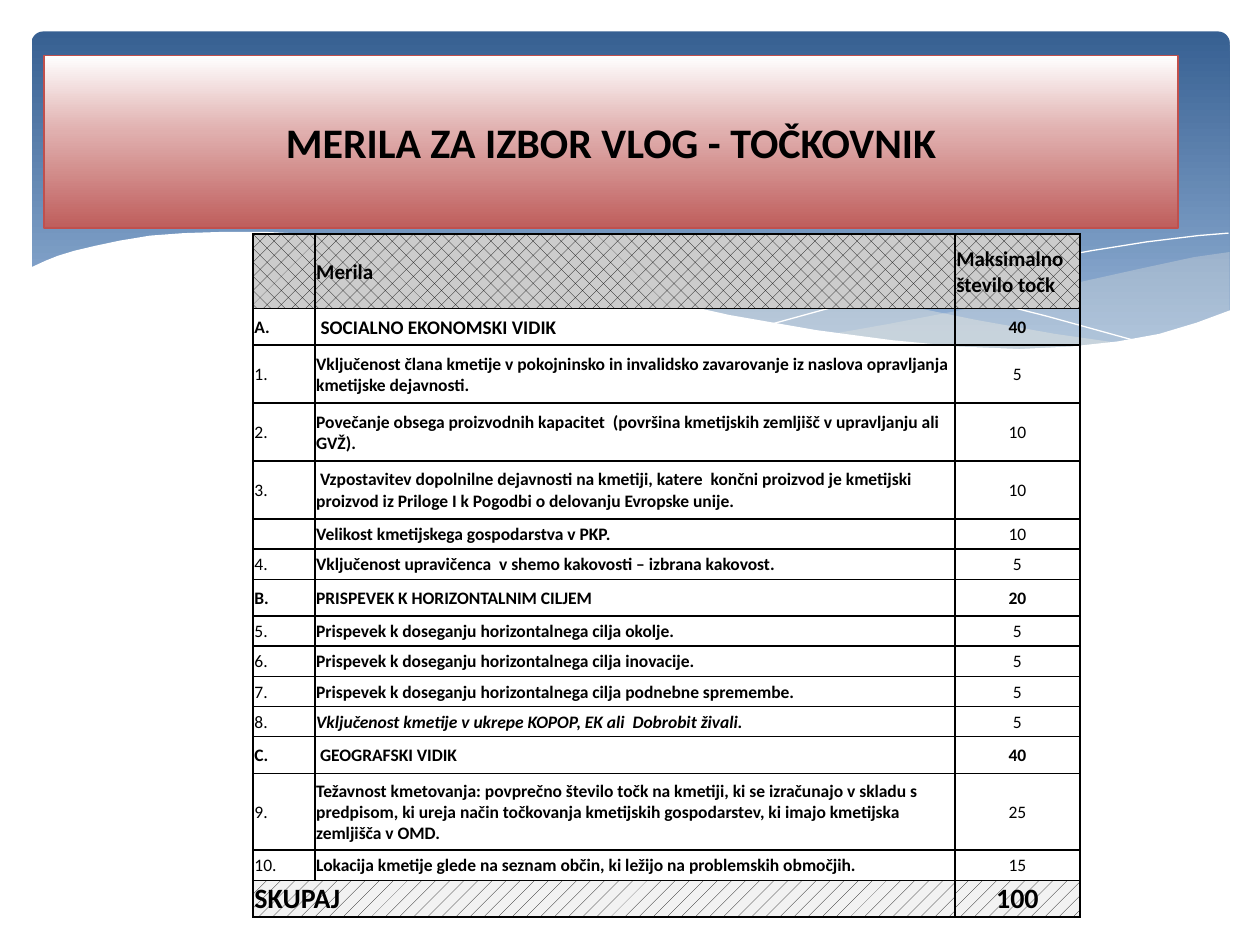
from copy import deepcopy
from dataclasses import dataclass

from lxml.etree import SubElement
from pptx import Presentation
from pptx.dml.color import RGBColor
from pptx.enum.dml import MSO_PATTERN
from pptx.enum.shapes import MSO_SHAPE
from pptx.enum.text import MSO_ANCHOR, PP_ALIGN
from pptx.oxml.ns import qn
from pptx.util import Inches, Pt


@dataclass(frozen=True)
class Theme:
    font: str = "Calibri"
    ink: str = "000000"
    white: str = "FFFFFF"
    mist: str = "EEECE1"
    title_line: str = "C0504D"
    header_back: str = "CCCCCC"
    total_back: str = "F2F2F2"
    banner_stops: tuple = ((0, "376092"), (0.9, "95B3D7"))
    title_stops: tuple = ((0, "FFFFFF"), (0.44, "E0AFAE"), (1, "BF5E5C"))
    title_size: int = 24
    total_size: int = 16
    header_size: int = 12
    lead_size: int = 11
    body_size: int = 10
    thin: float = 1
    thick: float = 1.5


THEME = Theme()
TITLE = "MERILA ZA IZBOR VLOG - TOČKOVNIK"

# kind, number, criterion, points, row height
CRITERIA = [
    ("header", "", "Merila", "Maksimalno število točk", 0.59),
    ("lead", "A.", " SOCIALNO EKONOMSKI VIDIK", "40", 0.29),
    ("item", "1.", "Vključenost člana kmetije v pokojninsko in invalidsko zavarovanje "
     "iz naslova opravljanja kmetijske dejavnosti.", "5", 0.46),
    ("item", "2.", "Povečanje obsega proizvodnih kapacitet  (površina kmetijskih "
     "zemljišč v upravljanju ali GVŽ).", "10", 0.46),
    ("item", "3.", " Vzpostavitev dopolnilne dejavnosti na kmetiji, katere  končni proizvod "
     "je kmetijski proizvod iz Priloge I k Pogodbi o delovanju Evropske unije.", "10", 0.46),
    ("item", "", "Velikost kmetijskega gospodarstva v PKP.", "10", 0.24),
    ("item", "4.", "Vključenost upravičenca  v shemo kakovosti – izbrana kakovost.", "5", 0.24),
    ("section", "B.", "PRISPEVEK K HORIZONTALNIM CILJEM", "20", 0.29),
    ("item", "5.", "Prispevek k doseganju horizontalnega cilja okolje.", "5", 0.24),
    ("item", "6.", "Prispevek k doseganju horizontalnega cilja inovacije.", "5", 0.24),
    ("item", "7.", "Prispevek k doseganju horizontalnega cilja podnebne spremembe.", "5", 0.24),
    ("italic", "8.", "Vključenost kmetije v ukrepe KOPOP, EK ali  Dobrobit živali.", "5", 0.24),
    ("section", "C.", " GEOGRAFSKI VIDIK", "40", 0.29),
    ("item", "9.", "Težavnost kmetovanja: povprečno število točk na kmetiji, ki se izračunajo "
     "v skladu s predpisom, ki ureja način točkovanja kmetijskih gospodarstev, ki imajo "
     "kmetijska zemljišča v OMD.", "25", 0.61),
    ("item", "10.", "Lokacija kmetije glede na seznam občin, ki ležijo na problemskih "
     "območjih.", "15", 0.24),
    ("total", "SKUPAJ", "", "100", 0.29),
]
COLUMN_WIDTHS = (0.49, 5.08, 0.99)
SIZES = {"header": THEME.header_size, "lead": THEME.lead_size, "total": THEME.total_size}
PATTERNS = {"header": (MSO_PATTERN.PERCENT_25, THEME.header_back),
            "total": (MSO_PATTERN.PERCENT_10, THEME.total_back)}

# outline, fill, opacity in percent; no fill means an open white curve
WAVES = [
    ([(9.76, 2), (9.48, 2.04), (9.06, 2.13), (8.61, 2.23), (8.05, 2.37), (7.53, 2.48),
      (7.06, 2.57), (6.61, 2.65), (6.91, 2.69), (7.32, 2.74), (7.69, 2.77), (8.14, 2.78),
      (8.54, 2.76), (8.89, 2.72), (9.21, 2.65), (9.49, 2.57), (9.76, 2.47)], THEME.mist, 29),
    ([(8.93, 2.73), (8.37, 2.65), (7.75, 2.54), (7.06, 2.4), (6.29, 2.22), (5.84, 2.11),
      (5.41, 2.03), (5.02, 1.96), (4.65, 1.91), (4.2, 1.87), (3.8, 1.85), (3.44, 1.86),
      (3.13, 1.88), (2.86, 1.91), (3.23, 1.96), (3.62, 2.03), (4.04, 2.11), (4.49, 2.22),
      (5.3, 2.4), (6.01, 2.55), (6.5, 2.64), (6.95, 2.7), (7.36, 2.75), (7.73, 2.77),
      (8.07, 2.78), (8.48, 2.77), (8.76, 2.75)], THEME.mist, 40),
    ([(3.09, 1.95), (3.35, 1.91), (3.63, 1.89), (4.01, 1.87), (4.5, 1.88), (4.89, 1.9),
      (5.33, 1.94), (5.82, 2), (6.36, 2.08), (6.95, 2.19), (7.6, 2.33), (8.31, 2.51),
      (9.07, 2.72)], None, 100),
    ([(6.13, 2.57), (6.53, 2.46), (6.95, 2.35), (7.48, 2.23), (8.06, 2.1), (8.66, 1.99),
      (9.1, 1.92), (9.51, 1.87), (9.75, 1.85)], None, 100),
    ([(9.77, 2.46), (9.5, 2.56), (9.2, 2.65), (8.87, 2.71), (8.5, 2.75), (8.09, 2.77),
      (7.61, 2.75), (7.08, 2.7), (6.48, 2.62), (5.79, 2.5), (5.03, 2.33), (4.47, 2.2),
      (3.91, 2.07), (3.4, 1.97), (2.92, 1.9), (2.5, 1.86), (2.11, 1.84), (1.77, 1.84),
      (1.46, 1.85), (1.19, 1.87), (0.95, 1.91), (0.76, 1.95), (0.59, 1.99), (0.46, 2.03),
      (0.36, 2.07), (0.23, 2.13), (0.23, 3.29), (9.77, 3.29)], THEME.white, 100),
]


def rgb(color):
    return RGBColor.from_string(color)


def place(shape, *box):
    shape.left, shape.top, shape.width, shape.height = map(Inches, box)


def fill_downward(shape, stops):
    """Fill with a gradient running from top to bottom."""
    shape.fill.gradient()
    shape.fill.gradient_angle = 270
    stop_list = shape._element.spPr.find(".//" + qn("a:gsLst"))
    while len(stop_list) < len(stops):
        stop_list.append(deepcopy(stop_list[-1]))
    for stop, (position, color) in zip(shape.fill.gradient_stops, stops):
        stop.position = position
        stop.color.rgb = rgb(color)


def style_paragraph(paragraph, size, bold, align, italic=False):
    paragraph.alignment = align
    font = paragraph.font
    font.name, font.size, font.bold, font.italic = THEME.font, Pt(size), bold, italic
    font.color.rgb = rgb(THEME.ink)


def add_wave(slide, points, color, opacity):
    start, *rest = [(Inches(x), Inches(y)) for x, y in points]
    builder = slide.shapes.build_freeform(*start)
    builder.add_line_segments(rest, close=color is not None)
    wave = builder.convert_to_shape()
    wave.shadow.inherit = False
    if color is None:
        wave.fill.background()
        wave.line.color.rgb = rgb(THEME.white)
        wave.line.width = Pt(0)
        return
    wave.line.fill.background()
    wave.fill.solid()
    wave.fill.fore_color.rgb = rgb(color)
    if opacity < 100:
        tint = wave._element.spPr.find(".//" + qn("a:srgbClr"))
        SubElement(tint, qn("a:alpha"), val=str(opacity * 1000))


def set_borders(cell, widths):
    """Draw the left, right, top and bottom borders, given in that order."""
    properties = cell._tc.get_or_add_tcPr()
    for index, (side, width) in enumerate(zip("LRTB", widths)):
        border = SubElement(properties, qn("a:ln" + side), w=str(Pt(width)))
        SubElement(SubElement(border, qn("a:solidFill")), qn("a:srgbClr"), val=THEME.ink)
        properties.insert(index, border)


def format_cell(cell, kind, row, column):
    cell.vertical_anchor = MSO_ANCHOR.MIDDLE
    cell.margin_left = cell.margin_top = cell.margin_right = Inches(0.01)
    cell.margin_bottom = 0
    bold = column == 1 or kind not in ("item", "italic")
    centred = column == 2 and kind != "header"
    size = THEME.body_size if kind == "lead" and column != 1 else SIZES.get(kind, THEME.body_size)
    style_paragraph(cell.text_frame.paragraphs[0], size, bold,
                    PP_ALIGN.CENTER if centred else PP_ALIGN.LEFT,
                    kind == "italic" and column == 1)
    if kind in PATTERNS:
        pattern, back = PATTERNS[kind]
        cell.fill.patterned()
        cell.fill.pattern = pattern
        cell.fill.fore_color.rgb = rgb(THEME.ink)
        cell.fill.back_color.rgb = rgb(back)
    else:
        cell.fill.background()
    outer_sides = (column == 0, column == 2, row == 0, False)
    set_borders(cell, [THEME.thick if outer else THEME.thin for outer in outer_sides])


def add_criteria(slide):
    heights = [criterion[-1] for criterion in CRITERIA]
    table = slide.shapes.add_table(
        len(CRITERIA), len(COLUMN_WIDTHS), Inches(2.01), Inches(1.86),
        Inches(sum(COLUMN_WIDTHS)), Inches(sum(heights))).table
    table.first_row = table.horz_banding = False
    for column, width in zip(table.columns, COLUMN_WIDTHS):
        column.width = Inches(width)
    for r, (kind, *texts, height) in enumerate(CRITERIA):
        table.rows[r].height = Inches(height)
        for c, text in enumerate(texts):
            cell = table.cell(r, c)
            cell.text = text
            format_cell(cell, kind, r, c)
    last = len(CRITERIA) - 1
    table.cell(last, 0).merge(table.cell(last, 1))


def main():
    prs = Presentation()
    prs.slide_width, prs.slide_height = Inches(10), Inches(7.5)
    slide = prs.slides.add_slide(prs.slide_layouts[5])

    banner = slide.shapes.add_shape(MSO_SHAPE.ROUNDED_RECTANGLE, 0, 0, 0, 0)
    place(banner, 0.25, 0.25, 9.51, 2.7)
    banner.adjustments[0] = 0.034
    banner.shadow.inherit = False
    banner.line.fill.background()
    fill_downward(banner, THEME.banner_stops)
    for wave in WAVES:
        add_wave(slide, *wave)

    title = slide.shapes.title
    slide.shapes._spTree.append(title._element)  # bring in front of the banner
    place(title, 0.35, 0.44, 9, 1.37)
    fill_downward(title, THEME.title_stops)
    title.line.color.rgb = rgb(THEME.title_line)
    title.line.width = Pt(0.75)
    title.text_frame.text = TITLE
    title.text_frame.vertical_anchor = MSO_ANCHOR.MIDDLE
    style_paragraph(title.text_frame.paragraphs[0], THEME.title_size, True, PP_ALIGN.CENTER)

    add_criteria(slide)
    prs.save("out.pptx")


if __name__ == "__main__":
    main()
